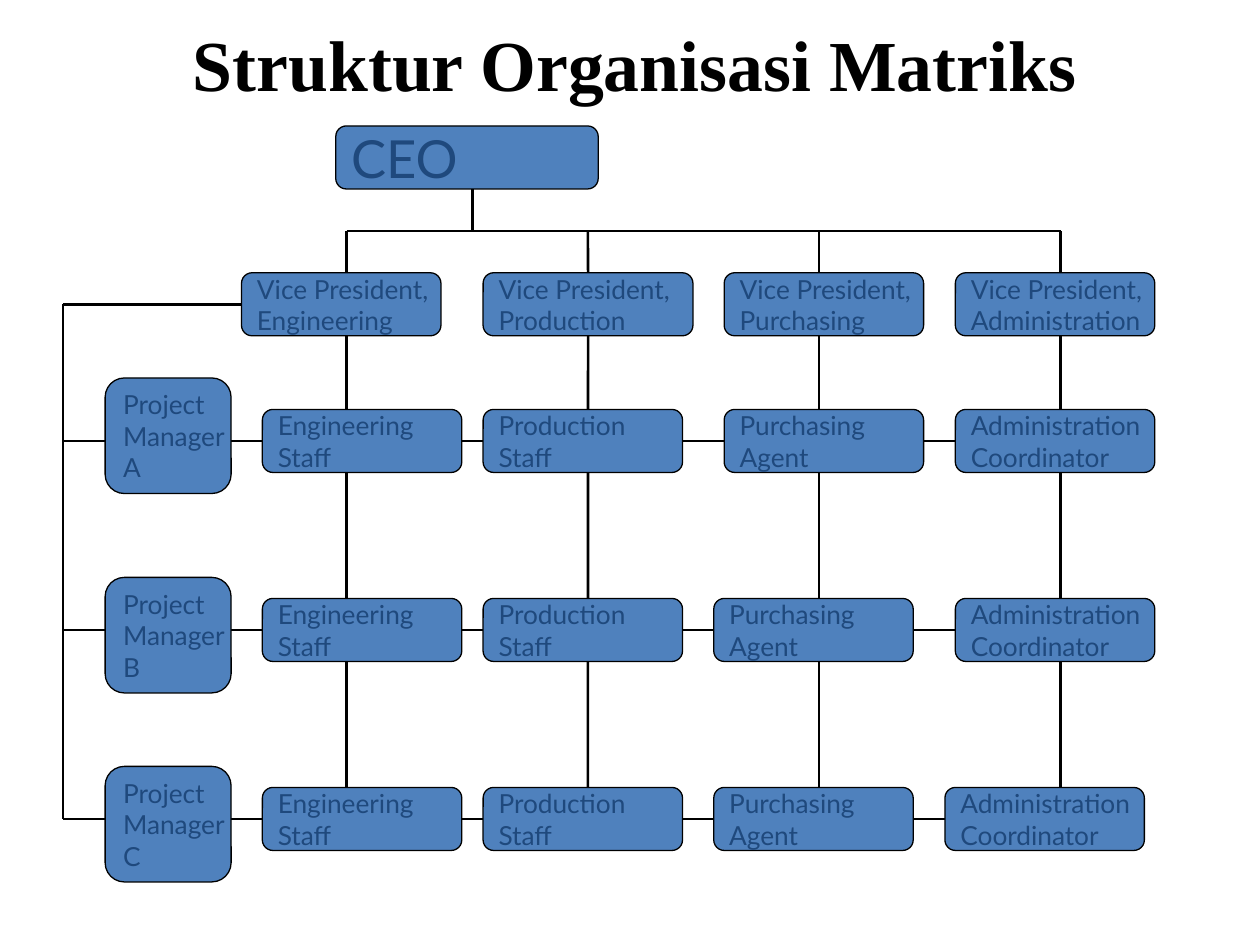
"""Build the matrix organisation structure slide."""
from lxml import etree
from pptx import Presentation
from pptx.dml.color import RGBColor
from pptx.enum.shapes import MSO_CONNECTOR, MSO_SHAPE
from pptx.enum.text import MSO_ANCHOR, PP_ALIGN
from pptx.oxml.ns import qn
from pptx.util import Cm, Pt

STRAIGHT = MSO_CONNECTOR.STRAIGHT
ROUNDED = MSO_SHAPE.FLOWCHART_ALTERNATE_PROCESS
MIDDLE = MSO_ANCHOR.MIDDLE
LEFT, CENTER = PP_ALIGN.LEFT, PP_ALIGN.CENTER
BLACK = RGBColor(0x00, 0x00, 0x00)
BLUE = RGBColor(0x4F, 0x81, 0xBD)
NAVY = RGBColor(0x1F, 0x49, 0x7D)
TOP, LEFT_SIDE, BOTTOM = 0, 1, 2

BOX_WIDTH, BOX_HEIGHT = 4.02, 1.27
MANAGER_LEFT, MANAGER_WIDTH, MANAGER_HEIGHT = 2.12, 2.54, 2.33
SPINE, BUS, VP_TOP = 1.27, 4.66, 5.5
VP_BOTTOM = VP_TOP + BOX_HEIGHT
VP_MIDDLE = VP_TOP + BOX_HEIGHT / 2
ROWS = [8.89 + 3.81 * index for index in range(3)]

VICE_PRESIDENTS = [
    ("Engineering", 4.87, BOX_WIDTH, 6.99),
    ("Production", 9.74, 4.23, 11.85),
    ("Purchasing", 14.6, BOX_WIDTH, 16.51),
    ("Administration", 19.26, BOX_WIDTH, 21.38),
]
STAFF = [
    ("Engineering", "Staff", (5.29, 5.29, 5.29)),
    ("Production", "Staff", (9.74, 9.74, 9.74)),
    ("Purchasing", "Agent", (14.6, 14.39, 14.39)),
    ("Administration", "Coordinator", (19.26, 19.26, 19.05)),
]
MANAGERS = [("A", 7.62), ("B", 11.64), ("C", 15.45)]


class Chart:
    """Hold the style and the current slide."""

    heading_font, body_font = "Times New Roman", "Lato"

    def __init__(self, page):
        self.shapes = page.shapes

    def set_text(self, frame, lines, size, font, color, alignment, bold=False):
        frame.vertical_anchor = MIDDLE
        frame.text = "\n".join(lines)
        for paragraph in frame.paragraphs:
            paragraph.alignment = alignment
            paragraph.font.size = Pt(size)
            paragraph.font.name = font
            paragraph.font.bold = bold
            paragraph.font.color.rgb = color

    def title(self, text, left, top, width, height):
        box = self.shapes.add_textbox(Cm(left), Cm(top), Cm(width), Cm(height))
        box.text_frame.word_wrap = True
        self.set_text(box.text_frame, [text], 41, self.heading_font, BLACK, CENTER, True)

    def box(self, lines, left, top, width=BOX_WIDTH, height=BOX_HEIGHT, size=15):
        box = self.shapes.add_shape(ROUNDED, Cm(left), Cm(top), Cm(width), Cm(height))
        box.shadow.inherit = False
        box.fill.solid()
        box.fill.fore_color.rgb = BLUE
        box.line.color.rgb = BLACK
        box.line.width = Pt(0.75)
        box.text_frame.word_wrap = False
        self.set_text(box.text_frame, lines, size, self.body_font, NAVY, LEFT)
        return box

    def line(self, x1, y1, x2, y2):
        line = self.shapes.add_connector(STRAIGHT, Cm(x1), Cm(y1), Cm(x2), Cm(y2))
        line.line.color.rgb = BLACK
        line.line.width = Pt(1.5)
        properties = line.element.find(qn("p:spPr"))
        etree.SubElement(properties, qn("a:effectLst"))
        return line


def main():
    deck = Presentation()
    deck.slide_width, deck.slide_height = Cm(25.4), Cm(19.05)
    chart = Chart(deck.slides.add_slide(deck.slide_layouts[6]))

    chart.title("Struktur Organisasi Matriks", 1.48, 0, 22.65, 2.54)
    chart.box(["CEO"], 6.77, 2.54, 5.29, size=30)
    chart.line(9.53, 3.81, 9.53, BUS)
    chart.line(VICE_PRESIDENTS[0][3], BUS, VICE_PRESIDENTS[-1][3], BUS)

    heads = {}
    for name, left, width, stem in VICE_PRESIDENTS:
        heads[name] = chart.box(["Vice President,", name], left, VP_TOP, width)
        upper = chart.line(stem, BUS, stem, VP_TOP)
        lower = chart.line(stem, VP_BOTTOM, stem, ROWS[-1])
        if name == "Production":
            upper.end_connect(heads[name], TOP)
            lower.begin_connect(heads[name], BOTTOM)

    chart.line(SPINE, VP_MIDDLE, SPINE, ROWS[-1])
    branch = chart.line(SPINE, VP_MIDDLE, VICE_PRESIDENTS[0][1], VP_MIDDLE)
    branch.end_connect(heads["Engineering"], LEFT_SIDE)

    for row, (middle, (letter, top)) in enumerate(zip(ROWS, MANAGERS)):
        chart.line(SPINE, middle, MANAGER_LEFT, middle)
        chart.line(MANAGER_LEFT + MANAGER_WIDTH, middle, 19.9, middle)
        chart.box([f"Project\vManager\v{letter}"], MANAGER_LEFT, top,
                  MANAGER_WIDTH, MANAGER_HEIGHT)
        for unit, role, lefts in STAFF:
            chart.box([unit, role], lefts[row], middle - BOX_HEIGHT / 2)

    deck.save("out.pptx")


if __name__ == "__main__":
    main()
